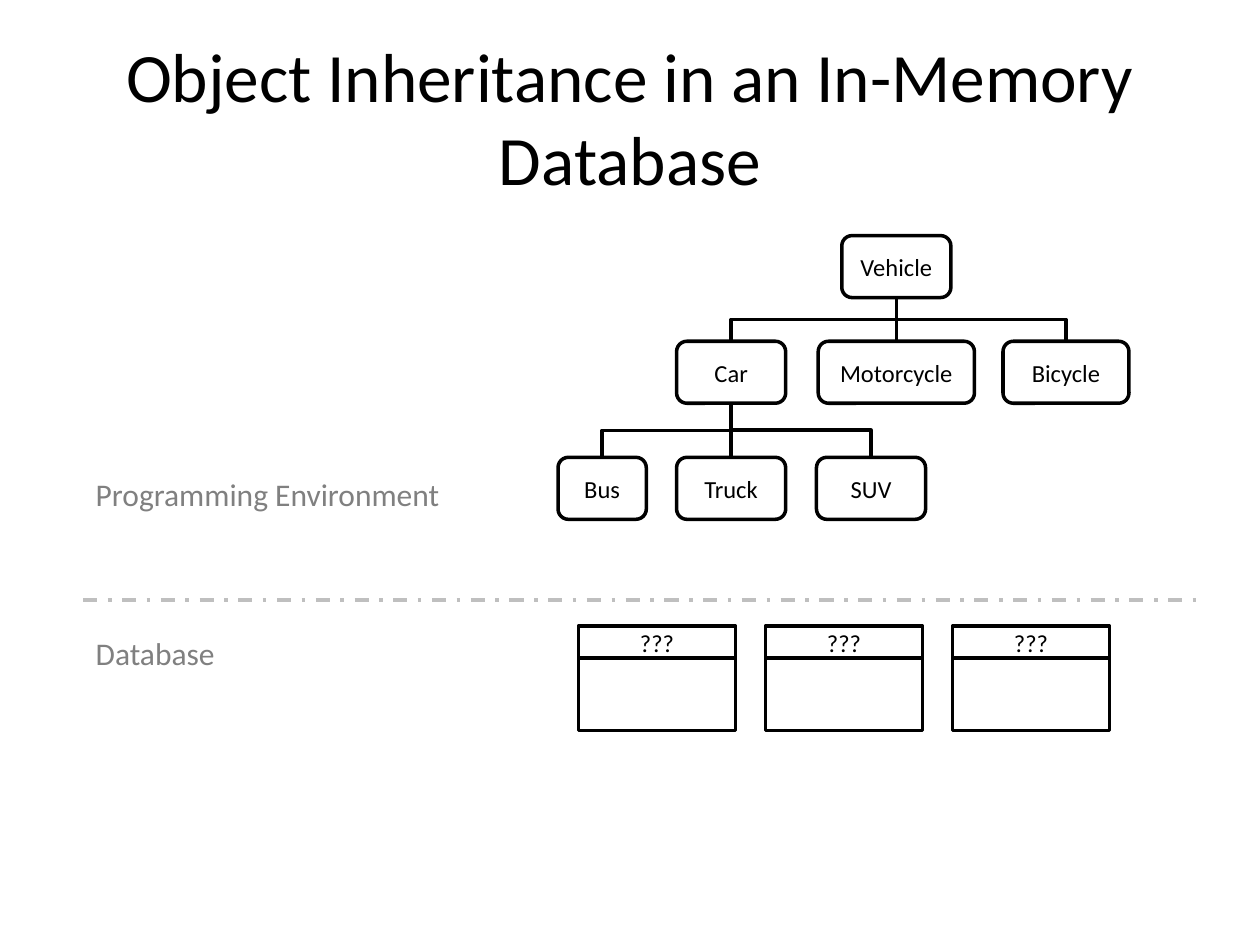
from lxml import etree
from pptx import Presentation
from pptx import util as u
from pptx.dml.color import RGBColor
from pptx.enum import dml, shapes, text
from pptx.oxml.ns import qn

BLACK, WHITE, GREY, SILVER = "000000", "FFFFFF", "808080", "BFBFBF"
NODE_HEIGHT = 1.25
NODES = {
    "Vehicle": (18.07, 4.75, 2.2, None),
    "Car": (14.74, 6.88, 2.2, "Vehicle"),
    "Motorcycle": (18.07, 6.88, 3.15, "Vehicle"),
    "Bicycle": (21.49, 6.88, 2.54, "Vehicle"),
    "Bus": (12.14, 9.22, 1.78, "Car"),
    "Truck": (14.74, 9.22, 2.2, "Car"),
    "SUV": (17.56, 9.22, 2.2, "Car"),
}
TABLE_COUNT, TABLE_LEFT, TABLE_PITCH, TABLE_WIDTH = 3, 11.66, 3.77, 3.17


def color(value):
    """Turn a hex string into a colour."""
    return RGBColor.from_string(value)


def apply_format(target, values):
    """Set each named attribute on the target."""
    for name, value in values.items():
        setattr(target, name, value)


def write(shape, content, size, ink=BLACK, align=text.PP_ALIGN.CENTER, **frame):
    """Put one formatted paragraph into a shape."""
    apply_format(shape.text_frame, {"word_wrap": True, **frame})
    paragraph = shape.text_frame.paragraphs[0]
    paragraph.alignment = align
    run = paragraph.add_run()
    run.text = content
    apply_format(run.font, {"name": "Calibri", "size": u.Pt(size)})
    run.font.color.rgb = color(ink)


def add_label(slide, box, content, size, **style):
    """Add a text box with one paragraph."""
    shape = slide.shapes.add_textbox(*map(u.Cm, box))
    write(shape, content, size, **style)


def add_box(slide, kind, box):
    """Add a white shape with a black outline."""
    shape = slide.shapes.add_shape(kind, *map(u.Cm, box))
    shape.shadow.inherit = False
    shape.fill.solid()
    shape.fill.fore_color.rgb = color(WHITE)
    shape.line.color.rgb = color(BLACK)
    shape.line.width = u.Pt(2)
    return shape


def add_line(slide, points, ink=BLACK, kind=shapes.MSO_CONNECTOR.STRAIGHT):
    """Add a connector without a shadow."""
    line = slide.shapes.add_connector(kind, *map(u.Cm, points))
    line.line.color.rgb = color(ink)
    line.line.width = u.Pt(2)
    etree.SubElement(line._element.spPr, qn("a:effectLst"))
    return line


def add_branch(slide, start_x, start_y, end_x, end_y):
    """Join a parent to a child below, turning halfway down."""
    if start_x == end_x:
        add_line(slide, (start_x, start_y, end_x, end_y))
        return
    middle_x, middle_y = (start_x + end_x) / 2, (start_y + end_y) / 2
    half_width = abs(end_x - start_x) / 2
    rightward = end_x > start_x
    reach = (end_y - start_y) / 2 * (1 if rightward else -1)
    points = (middle_x + reach, middle_y - half_width,
              middle_x - reach, middle_y + half_width)
    elbow = add_line(slide, points, kind=shapes.MSO_CONNECTOR.ELBOW)
    elbow.rotation = 270 if rightward else 90


def add_hierarchy(slide):
    """Draw the class tree."""
    for name, (center, top, width, parent) in NODES.items():
        node = add_box(slide, shapes.MSO_SHAPE.ROUNDED_RECTANGLE,
                       (center - width / 2, top, width, NODE_HEIGHT))
        write(node, name, 14, vertical_anchor=text.MSO_ANCHOR.MIDDLE)
        if parent:
            parent_center, parent_top = NODES[parent][:2]
            add_branch(slide, parent_center, parent_top + NODE_HEIGHT, center, top)


def add_database_table(slide, left):
    """Draw a database table with an unknown name."""
    add_box(slide, shapes.MSO_SHAPE.RECTANGLE, (left, 12.62, TABLE_WIDTH, 2.11))
    add_line(slide, (left, 13.26, left + TABLE_WIDTH, 13.26))
    add_label(slide, (left, 12.53, TABLE_WIDTH, 0.86), "???", 14)


def main():
    """Build and save the slide."""
    presentation = Presentation()
    apply_format(presentation, {"slide_width": u.Cm(25.4), "slide_height": u.Cm(19.05)})
    slide = presentation.slides.add_slide(presentation.slide_layouts[6])
    add_label(slide, (1.27, 0.76, 22.86, 3.18),
              "Object Inheritance in an In-Memory Database", 39.6,
              vertical_anchor=text.MSO_ANCHOR.MIDDLE)
    add_hierarchy(slide)
    for content, top, width in (("Programming Environment", 9.45, 7.52),
                                ("Database", 12.65, 2.95)):
        add_label(slide, (1.68, top, width, 1.02), content, 18, ink=GREY,
                  align=text.PP_ALIGN.LEFT, word_wrap=False)
    divider = add_line(slide, (1.68, 12.09, 24.13, 12.09), SILVER)
    divider.line.dash_style = dml.MSO_LINE.DASH_DOT
    for index in range(TABLE_COUNT):
        add_database_table(slide, TABLE_LEFT + index * TABLE_PITCH)
    presentation.save("out.pptx")


if __name__ == "__main__":
    main()
